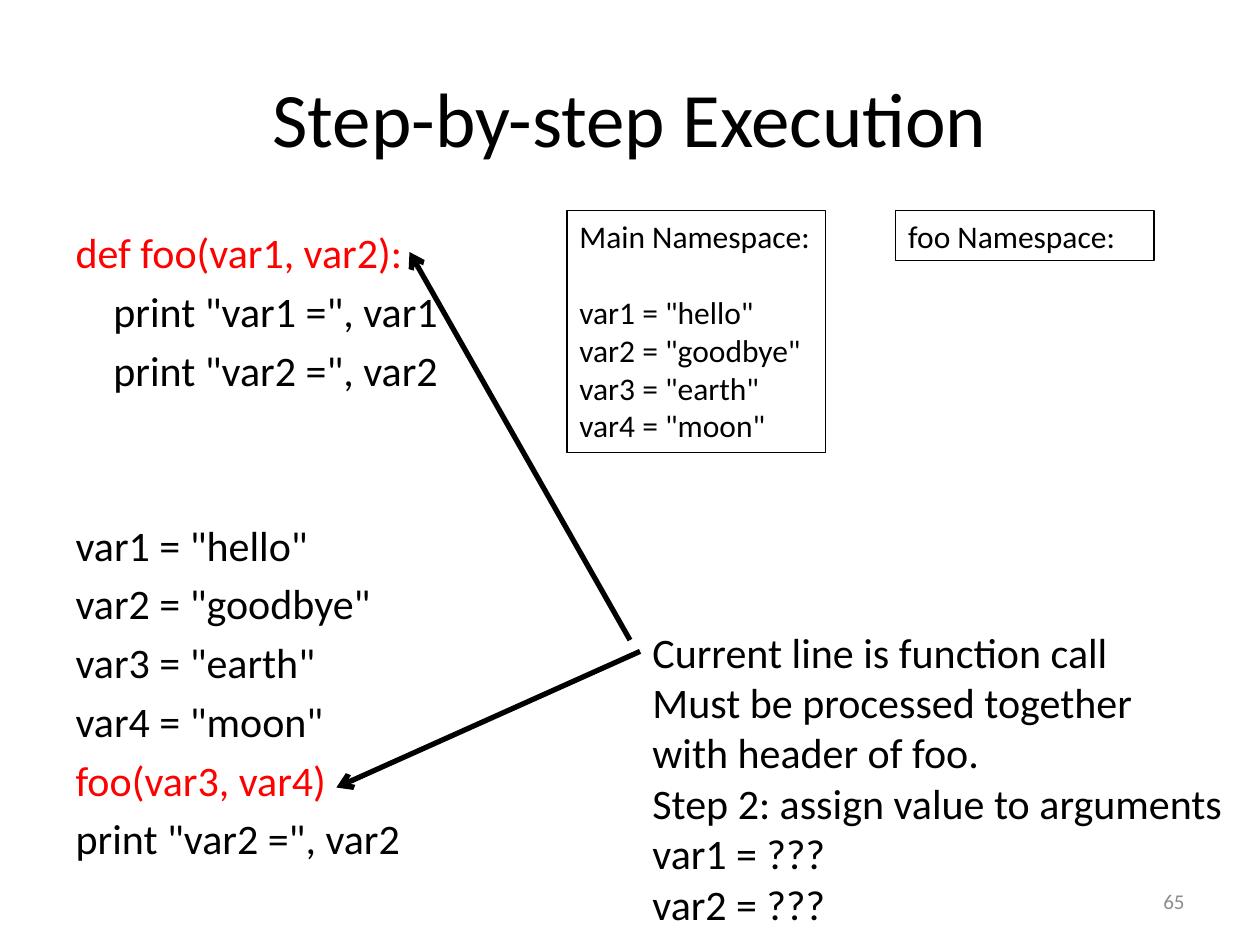
from pptx import Presentation
from pptx.dml.color import RGBColor
from pptx.enum.shapes import MSO_CONNECTOR as Connector, MSO_SHAPE as Shape
from pptx.enum.text import MSO_ANCHOR as Anchor, MSO_AUTO_SIZE as AutoSize, PP_ALIGN as Align
from pptx.oxml.ns import qn
from pptx.util import Inches, Pt
from lxml.etree import SubElement

COLORS = {"ink": "000000", "current": "FF0000", "number": "8C8C8C"}
FONT = "Calibri"
HANGING = 0.38
CODE_INDENT = 0.3

HEADER, CALL = "def foo(var1, var2):", "foo(var3, var4)"
FUNCTION_BODY = ['print "var1 =", var1', 'print "var2 =", var2']
ASSIGNMENTS = ['var1 = "hello"', 'var2 = "goodbye"', 'var3 = "earth"', 'var4 = "moon"']
EXPLANATION = [
    "Current line is function call",
    "Must be processed together\vwith header of foo.",
    "Step 2: assign value to arguments",
    "var1 = ???",
    "var2 = ???",
]


def rgb(name):
    return RGBColor.from_string(COLORS[name])


class SlideBuilder:
    def __init__(self, slide):
        self.slide = slide

    def place(self, item, box):
        item.left, item.top, item.width, item.height = map(Inches, box)

    def fill_lines(self, frame, lines, size, color="ink", align=Align.LEFT):
        """Fill the frame with one paragraph per line and return the paragraphs."""
        for number, line in enumerate(lines):
            paragraph = frame.add_paragraph() if number else frame.paragraphs[0]
            paragraph.text = line
            paragraph.alignment = align
            for run in paragraph.runs:
                run.font.name = FONT
                run.font.size = Pt(size)
                run.font.color.rgb = rgb(color)
        return frame.paragraphs

    def title(self, text, box):
        heading = self.slide.shapes.title
        self.place(heading, box)
        heading.text_frame.vertical_anchor = Anchor.MIDDLE
        self.fill_lines(heading.text_frame, [text], 44, align=Align.CENTER)

    def code(self, function, program, box, highlighted):
        """List a function (header, then indented body) and, after a gap, the program."""
        listing = self.slide.placeholders[1]
        self.place(listing, box)
        paragraphs = self.fill_lines(listing.text_frame, function + program, 24)
        for number, paragraph in enumerate(paragraphs):
            in_body = 0 < number < len(function)
            properties = paragraph._p.get_or_add_pPr()
            properties.set("marL", str(Inches(HANGING + CODE_INDENT * in_body)))
            properties.set("indent", str(Inches(-HANGING)))
            SubElement(properties, qn("a:buNone"))
            if paragraph.text in highlighted:
                paragraph.runs[0].font.color.rgb = rgb("current")
        paragraphs[len(function)].space_before = Pt(71)

    def text(self, lines, box, size, wrap=True, **style):
        note = self.slide.shapes.add_textbox(*map(Inches, box))
        note.text_frame.word_wrap = wrap
        self.fill_lines(note.text_frame, lines, size, **style)
        return note.text_frame

    def namespace(self, heading, variables, box):
        panel = self.slide.shapes.add_shape(Shape.RECTANGLE, *map(Inches, box))
        panel.shadow.inherit = False
        panel.fill.background()
        panel.line.color.rgb = rgb("ink")
        panel.line.width = Pt(0.75)
        frame = panel.text_frame
        frame.word_wrap = True
        frame.auto_size = AutoSize.SHAPE_TO_FIT_TEXT
        frame.vertical_anchor = Anchor.TOP
        paragraphs = self.fill_lines(frame, [heading, *variables], 18)
        if variables:
            paragraphs[1].space_before = Pt(22)

    def arrow(self, start, end):
        pointer = self.slide.shapes.add_connector(
            Connector.STRAIGHT, *map(Inches, (*start, *end)))
        pointer.line.color.rgb = rgb("ink")
        pointer.line.width = Pt(3)
        properties = pointer._element.spPr
        SubElement(properties.find(qn("a:ln")), qn("a:tailEnd"), type="arrow")
        SubElement(properties, qn("a:effectLst"))


def main():
    deck = Presentation()
    deck.slide_width, deck.slide_height = Inches(10), Inches(7.5)
    builder = SlideBuilder(deck.slides.add_slide(deck.slide_layouts[1]))

    builder.title("Step-by-step Execution", (0.5, 0.3, 9, 1.25))
    builder.code(
        function=[HEADER, *FUNCTION_BODY],
        program=[*ASSIGNMENTS, CALL, FUNCTION_BODY[1]],
        box=(0.5, 1.75, 9, 4.95), highlighted=(HEADER, CALL))

    page_number = builder.text(["65"], (7.17, 6.95, 2.33, 0.4), 12,
                               color="number", align=Align.RIGHT)
    page_number.vertical_anchor = Anchor.MIDDLE
    explanation = builder.text(EXPLANATION, (5.08, 4.92, 4.76, 2.52), 24, wrap=False)
    explanation.auto_size = AutoSize.SHAPE_TO_FIT_TEXT

    builder.namespace("Main Namespace:", ASSIGNMENTS, (4.5, 1.67, 2.05, 1.92))
    builder.arrow((5, 5.08), (3.25, 2))
    builder.arrow((5.08, 5.17), (2.67, 6.25))
    builder.namespace("foo Namespace:", [], (7.11, 1.67, 2.05, 0.4))

    deck.save("out.pptx")


if __name__ == "__main__":
    main()
